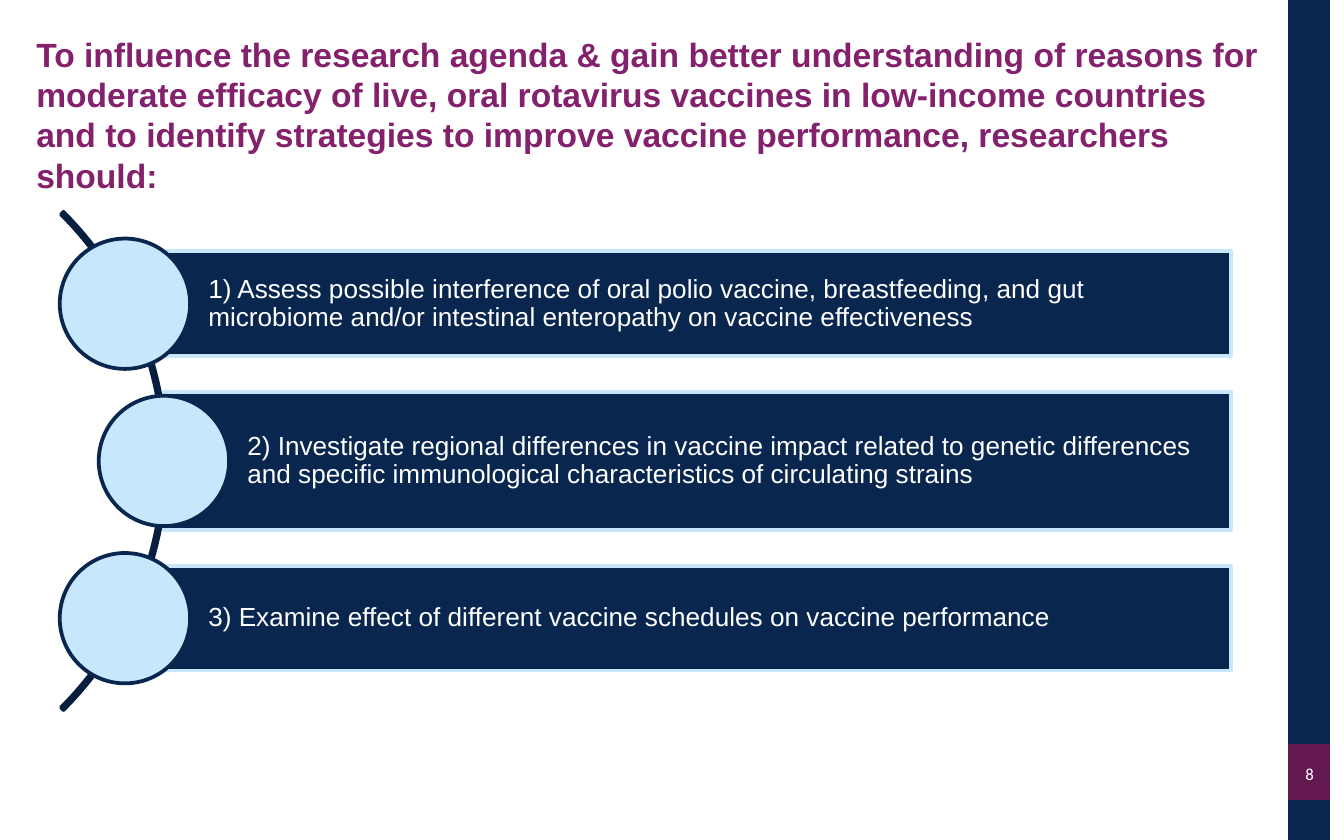
"""Build the slide on research priorities for rotavirus vaccines."""
from dataclasses import dataclass

from pptx import Presentation
from pptx.dml.color import RGBColor
from pptx.enum.shapes import MSO_SHAPE
from pptx.enum.text import MSO_ANCHOR, MSO_AUTO_SIZE, PP_ALIGN
from pptx.util import Inches, Pt

RECTANGLE, OVAL, BLOCK_ARC = MSO_SHAPE.RECTANGLE, MSO_SHAPE.OVAL, MSO_SHAPE.BLOCK_ARC
MIDDLE, NO_AUTOFIT = MSO_ANCHOR.MIDDLE, MSO_AUTO_SIZE.NONE
LEFT, CENTER = PP_ALIGN.LEFT, PP_ALIGN.CENTER


@dataclass(frozen=True)
class Theme:
    navy: str = "09264E"
    arc: str = "071E3E"
    plum: str = "631950"
    purple: str = "84216C"
    sky: str = "C6E7FC"
    white: str = "FFFFFF"
    font: str = "Arial"
    number_font: str = "Calibri"
    title_size: float = 18
    body_size: float = 14
    number_size: float = 9


theme = Theme()


def add_shape(kind, left, top, width, height, fill, line, weight):
    shape = page.shapes.add_shape(
        kind, Inches(left), Inches(top), Inches(width), Inches(height))
    shape.shadow.inherit = False
    if fill:
        shape.fill.solid()
        shape.fill.fore_color.rgb = RGBColor.from_string(fill)
    else:
        shape.fill.background()
    shape.line.color.rgb = RGBColor.from_string(line)
    shape.line.width = Pt(weight)
    return shape


def write(box, text, size, color, font=theme.font, bold=False, align=LEFT,
          left=0.08, right=0.08):
    frame = box.text_frame
    frame.text = text
    frame.word_wrap = True
    frame.auto_size = NO_AUTOFIT
    frame.vertical_anchor = MIDDLE
    frame.margin_left, frame.margin_right = Inches(left), Inches(right)
    frame.margin_top = frame.margin_bottom = Inches(0.04)
    para = frame.paragraphs[0]
    para.alignment = align
    para.space_before = Pt(0)
    span = para.runs[0]
    span.font.name = font
    span.font.size = Pt(size)
    span.font.bold = bold
    span.font.color.rgb = RGBColor.from_string(color)
    return para


deck = Presentation()
deck.slide_width, deck.slide_height = Inches(10), Inches(6.25)
page = deck.slides.add_slide(deck.slide_layouts[5])

band_left, band_width = 9.59, 0.3
add_shape(RECTANGLE, band_left, 0, band_width, 6.25, theme.navy, theme.navy, 0.75)
add_shape(RECTANGLE, band_left, 5.54, band_width, 0.41, theme.plum, theme.plum, 0.75)
number = page.shapes.add_textbox(
    Inches(band_left), Inches(5.59), Inches(0.31), Inches(0.33))
write(number, "8", theme.number_size, theme.white, theme.number_font, align=CENTER)

title = page.shapes.title
title.left, title.top = Inches(0.19), Inches(0.25)
title.width, title.height = Inches(9.27), Inches(1.2)
write(title, "To influence the research agenda & gain better understanding of reasons "
      "for moderate efficacy of live, oral rotavirus vaccines in low-income countries "
      "and to identify strategies to improve vaccine performance, researchers should:",
      theme.title_size, theme.purple, bold=True)

arc = add_shape(BLOCK_ARC, -4, 0.81, 5.24, 5.24, None, theme.arc, 2)
for index, value in enumerate((189, 27, 0.005)):
    arc.adjustments[index] = value

steps = [
    (0.93, 0.78, "1) Assess possible interference of oral polio vaccine, breastfeeding, "
     "and gut microbiome and/or intestinal enteropathy on vaccine effectiveness"),
    (1.22, 1.03, "2) Investigate regional differences in vaccine impact related to genetic "
     "differences and specific immunological characteristics of circulating strains"),
    (0.93, 0.78, "3) Examine effect of different vaccine schedules on vaccine performance"),
]
bar_right, circle_size, first_center, pitch = 9.16, 0.97, 2.26, 1.17
for index, (bar_left, bar_height, text) in enumerate(steps):
    center = first_center + index * pitch
    bar = add_shape(RECTANGLE, bar_left, center - bar_height / 2, bar_right - bar_left,
                    bar_height, theme.navy, theme.sky, 2)
    para = write(bar, text, theme.body_size, theme.white, left=0.62, right=0.04)
    para.line_spacing = 0.9
    add_shape(OVAL, bar_left - circle_size / 2, center - circle_size / 2,
              circle_size, circle_size, theme.sky, theme.navy, 2)

deck.save("out.pptx")
